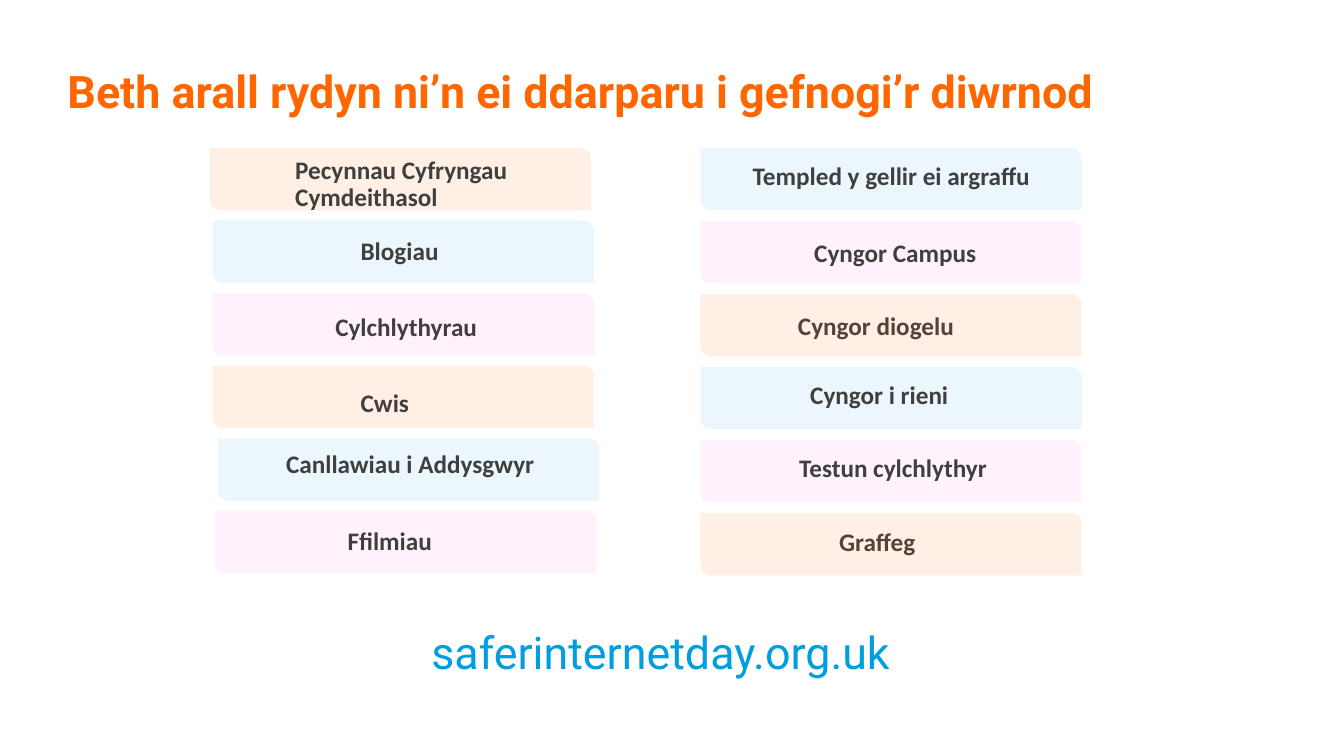
from dataclasses import dataclass

from lxml import etree
from pptx import Presentation
from pptx.dml.color import RGBColor
from pptx.enum.shapes import MSO_SHAPE
from pptx.enum.text import MSO_ANCHOR, MSO_AUTO_SIZE, PP_ALIGN
from pptx.oxml.ns import qn
from pptx.util import Cm, Pt

DIAG = MSO_SHAPE.ROUND_2_DIAG_RECTANGLE
TOP = MSO_ANCHOR.TOP
GROW = MSO_AUTO_SIZE.SHAPE_TO_FIT_TEXT
LEFT, MID = PP_ALIGN.LEFT, PP_ALIGN.CENTER


@dataclass(frozen=True)
class Theme:
    orange: str = "FF6600"
    blue: str = "009DE0"
    pink: str = "FFAEF0"
    ink: str = "3F3F3E"
    head: str = "Roboto"
    body: str = "Calibri"
    big: int = 32
    small: int = 18


THEME = Theme()
# Opacity of each bar colour, in percent
TINT = {THEME.orange: 10, THEME.blue: 8, THEME.pink: 15}
BAR_W, BAR_H = 9.61, 1.57


@dataclass(frozen=True)
class Item:
    text: str
    color: str
    x: float  # label offset from the column's left
    y: float  # label offset from the row's top
    w: float
    shift: float = 0  # sideways shift of the bar
    lead: float = 0.9
    align: int = LEFT
    under: bool = False  # label lies beneath the tint


LEFT_COL = [
    Item("Pecynnau Cyfryngau Cymdeithasol", THEME.orange, 1.83, 0.11, 5.87, -0.08),
    Item("Blogiau", THEME.blue, 3.48, 0.33, 2.64),
    Item("Cylchlythyrau", THEME.pink, 2.84, 0.41, 4.22),
    Item("Cwis", THEME.orange, 3.48, 0.41, 2.59, lead=1),
    Item("Canllawiau i Addysgwyr", THEME.blue, 0.18, 0.13, 9.6, 0.13, 1, MID),
    Item("Ffilmiau", THEME.pink, 3.15, 0.23, 3.05, 0.05, 1),
]
RIGHT_COL = [
    Item("Templed y gellir ei argraffu", THEME.blue, 1.07, 0.26, 7.62),
    Item("Cyngor Campus", THEME.pink, 2.62, 0.37, 5.11),
    Item("Cyngor diogelu", THEME.orange, 2.21, 0.36, 6.22, under=True),
    Item("Cyngor i rieni", THEME.blue, 2.52, 0.28, 6.32),
    Item("Testun cylchlythyr", THEME.pink, 2.24, 0.26, 5.59),
    Item("Graffeg", THEME.orange, 3.25, 0.3, 4.04, under=True),
]


def add_text(slide, box, text, font, size, color, bold=False, lead=1.0,
             align=LEFT, wrap=True, grow=True):
    shape = slide.shapes.add_textbox(*map(Cm, box))
    frame = shape.text_frame
    frame.word_wrap = wrap
    frame.vertical_anchor = TOP
    if grow:
        frame.auto_size = GROW
    para = frame.paragraphs[0]
    para.text = text
    para.alignment = align
    para.line_spacing = lead
    para.font.name = font
    para.font.size = Pt(size)
    para.font.bold = bold
    para.font.color.rgb = RGBColor.from_string(color)


def add_bar(slide, x, y, color):
    # Turned a quarter, so width and height swap about the centre
    off = (BAR_W - BAR_H) / 2
    bar = slide.shapes.add_shape(
        DIAG, Cm(x + off), Cm(y - off), Cm(BAR_H), Cm(BAR_W))
    bar.rotation = 90
    bar.shadow.inherit = False
    bar.line.fill.background()
    bar.fill.solid()
    bar.fill.fore_color.rgb = RGBColor.from_string(color)
    tone = bar.fill._xPr.find(".//" + qn("a:srgbClr"))
    etree.SubElement(tone, qn("a:alpha"), val=str(TINT[color] * 1000))


def add_label(slide, x, y, item):
    add_text(slide, (x + item.x, y + item.y, item.w, 0.94), item.text,
             THEME.body, THEME.small, THEME.ink, True, item.lead, item.align)


def add_column(slide, box, items):
    x, top, height = box
    pitch = (height - BAR_H) / (len(items) - 1)
    for row, item in enumerate(items):
        y = top + row * pitch
        if item.under:
            add_label(slide, x, y, item)
        add_bar(slide, x + item.shift, y, item.color)
        if not item.under:
            add_label(slide, x, y, item)


def add_title(slide, box):
    add_text(slide, box, "Beth arall rydyn ni’n ei ddarparu i gefnogi’r diwrnod",
             THEME.head, THEME.big, THEME.orange, True, 0.9, grow=False)


def add_site(slide, box):
    add_text(slide, box, "saferinternetday.org.uk",
             THEME.head, THEME.big, THEME.blue, wrap=False)


def main():
    deck = Presentation()
    deck.slide_width, deck.slide_height = Cm(33.87), Cm(19.05)
    slide = deck.slides.add_slide(deck.slide_layouts[6])
    add_title(slide, (1.45, 1.63, 29.21, 2.18))
    add_column(slide, (5.36, 3.73, 10.72), LEFT_COL)
    add_column(slide, (17.65, 3.73, 10.77), RIGHT_COL)
    add_site(slide, (10.62, 15.62, 12.62, 1.63))
    deck.save("out.pptx")


if __name__ == "__main__":
    main()
